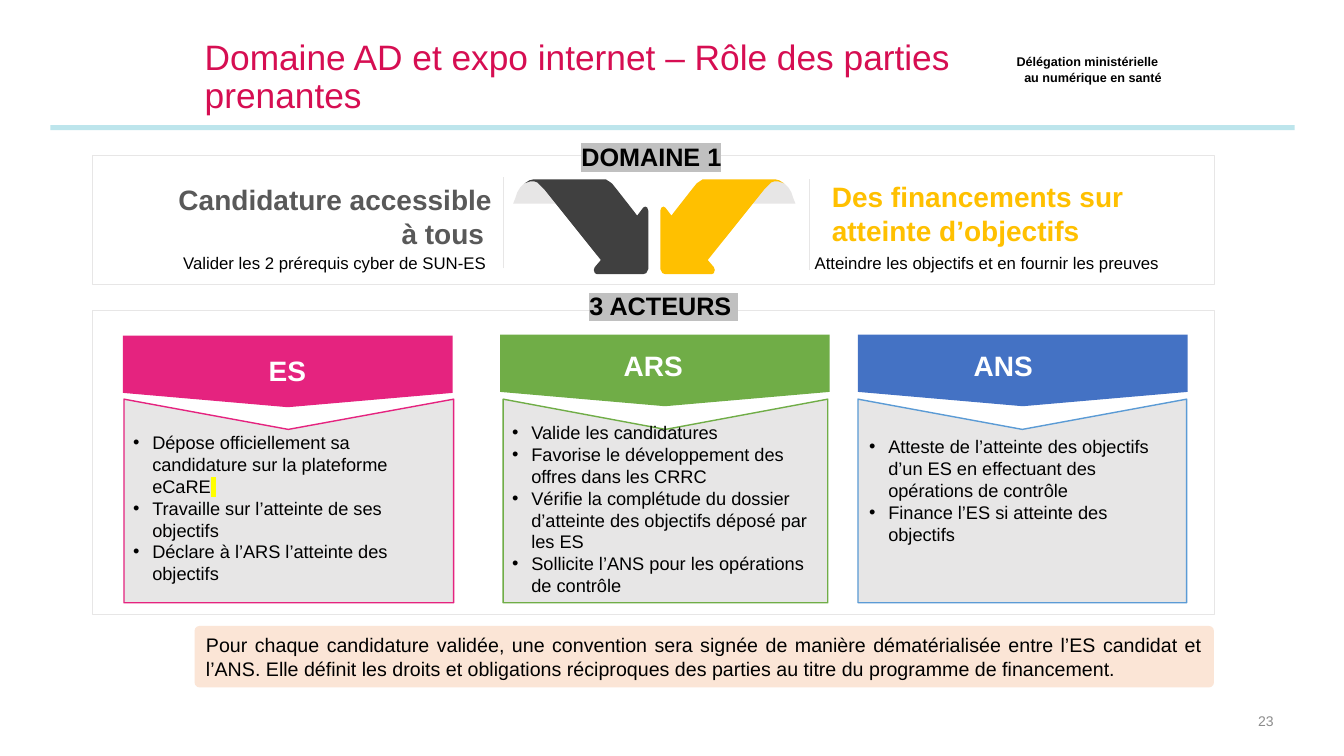
import dataclasses
import typing

import lxml.etree
import pptx
import pptx.dml.color
import pptx.enum.shapes
import pptx.enum.text
import pptx.oxml.ns
import pptx.util

RGB = pptx.dml.color.RGBColor
SHAPE = pptx.enum.shapes.MSO_SHAPE
ALIGN = pptx.enum.text.PP_ALIGN
ANCHOR = pptx.enum.text.MSO_ANCHOR
qn = pptx.oxml.ns.qn

CELL = 9144
COLS, ROWS = 1333, 750
Box = tuple[int, int, int, int]

BLACK, WHITE = RGB(0, 0, 0), RGB(255, 255, 255)
CRIMSON, PINK = RGB(0xD6, 0x0E, 0x52), RGB(0xE5, 0x23, 0x7F)
GREEN, BLUE, SKY = RGB(0x70, 0xAD, 0x47), RGB(0x44, 0x72, 0xC4), RGB(0x5B, 0x9B, 0xD5)
PALE, DARK, SLATE = RGB(0xE7, 0xE6, 0xE6), RGB(0x40, 0x40, 0x40), RGB(0x59, 0x59, 0x59)
AMBER, AQUA, PEACH = RGB(0xFF, 0xC0, 0), RGB(0xBD, 0xE5, 0xEC), RGB(0xFB, 0xE5, 0xD6)
GREY = RGB(0x8C, 0x8C, 0x8C)
SILVER, YELLOW = "C0C0C0", "FFFF00"

MIRROR = 1298
TAIL = [(509, 202), (562, 202), (562, 179), (526, 179), (522, 181), (519, 183),
        (516, 186), (513, 191), (511, 197)]
ARROW = [(643, 265), (643, 209), (642, 206), (640, 205), (638, 206), (632, 214),
         (629, 210), (611, 187), (607, 182), (604, 180), (601, 178), (599, 178),
         (529, 178), (525, 179), (522, 181), (520, 182), (523, 181), (526, 180),
         (530, 180), (533, 181), (536, 184), (540, 188), (596, 258), (590, 265),
         (589, 268), (590, 271), (592, 272), (638, 272), (641, 271), (642, 269),
         (643, 267)]


@dataclasses.dataclass
class Text:
    """A block of text: its lines, look and place."""

    box: Box
    lines: list[str]
    size: float
    color: RGB = BLACK
    bold: bool = False
    align: typing.Any = ALIGN.LEFT
    anchor: typing.Any = ANCHOR.TOP
    inset: typing.Optional[int] = 0
    wrap: bool = True
    highlight: str = ""
    bullet: bool = False
    spacing: float = 1.0


@dataclasses.dataclass
class Actor:
    """A party with its banner, card and list of tasks."""

    name: str
    color: RGB
    edge: RGB
    banner: Box
    label: Box
    card: tuple[int, int]
    tasks: Box
    lines: list[str]
    slot: int


ACTORS = [
    Actor("ES", PINK, PINK, (122, 333, 327, 71), (230, 348, 110, 39), (123, 450), (122, 423, 319, 163),
          ["Dépose officiellement sa candidature sur la plateforme eCaRE",
           "Travaille sur l’atteinte de ses objectifs",
           "Déclare à l’ARS l’atteinte des objectifs"], 1),
    Actor("ARS", GREEN, GREEN, (496, 332, 327, 71), (593, 343, 110, 39), (499, 821), (498, 413, 321, 185),
          ["Valide les candidatures",
           "Favorise le développement des offres dans les CRRC",
           "Vérifie la complétude du dossier d’atteinte des objectifs déposé par les ES",
           "Sollicite l’ANS pour les opérations de contrôle"], 2),
    Actor("ANS", BLUE, SKY, (851, 332, 327, 71), (940, 343, 110, 39), (851, 1177), (852, 427, 325, 119),
          ["Atteste de l’atteinte des objectifs d’un ES en effectuant des opérations de contrôle",
           "Finance l’ES si atteinte des objectifs"], 4),
]

TITLE = Text((193, 44, 864, 67), ["Domaine AD et expo internet – Rôle des parties prenantes"],
             25.2, CRIMSON, anchor=ANCHOR.MIDDLE, inset=None, spacing=0.9)
NOTICE = Text((193, 621, 1011, 61),
              ["Pour chaque candidature validée, une convention sera signée de manière dématérialisée "
               "entre l’ES candidat et l’ANS. Elle définit les droits et obligations réciproques des "
               "parties au titre du programme de financement."],
              14, align=ALIGN.JUSTIFY, anchor=ANCHOR.MIDDLE, inset=None)
TEXTS = [
    Text((987, 44, 165, 50), ["Délégation ministérielle ", "au numérique en santé"], 9, bold=True,
         align=ALIGN.RIGHT, anchor=ANCHOR.MIDDLE),
    Text((973, 695, 300, 40), ["23"], 10, GREY, align=ALIGN.RIGHT, anchor=ANCHOR.MIDDLE, inset=None),
    Text((825, 178, 76, 43), ["Des financements sur", "atteinte d’objectifs"], 20, AMBER, True, wrap=False),
    Text((412, 181, 76, 43), ["Candidature accessible", "à tous "], 20, SLATE, True, ALIGN.RIGHT, wrap=False),
    Text((808, 251, 375, 20), ["Atteindre les objectifs et en fournir les preuves"], 12, align=ALIGN.JUSTIFY),
    Text((118, 251, 369, 20), ["Valider les 2 prérequis cyber de SUN-ES "], 12, align=ALIGN.RIGHT),
    Text((525, 140, 242, 30), ["DOMAINE 1"], 18, bold=True, align=ALIGN.CENTER, highlight=SILVER),
    Text((455, 288, 407, 30), ["3 ACTEURS "], 18, bold=True, align=ALIGN.CENTER, highlight=SILVER),
]


def grid(box: Box) -> list[int]:
    """Turn grid columns and rows into lengths."""
    return [pptx.util.Emu(n * CELL) for n in box]


def add_run(p: typing.Any, text: str, t: Text, highlight: str) -> None:
    """Add a formatted run to a paragraph."""
    r = p.add_run()
    r.text = text
    for name, value in {"name": "Arial", "size": pptx.util.Pt(t.size), "bold": t.bold}.items():
        setattr(r.font, name, value)
    r.font.color.rgb = t.color
    if highlight:
        mark = lxml.etree.Element(qn("a:highlight"))
        lxml.etree.SubElement(mark, qn("a:srgbClr"), val=highlight)
        r.font._element.find(qn("a:latin")).addprevious(mark)


def fill_text(tf: typing.Any, t: Text) -> None:
    """Write a block of text into a frame."""
    frame = {"word_wrap": t.wrap, "auto_size": pptx.enum.text.MSO_AUTO_SIZE.NONE, "vertical_anchor": t.anchor}
    sides = ("left", "top", "right", "bottom")
    insets = (10, 5, 10, 5) if t.inset is None else (t.inset,) * 4
    frame |= {f"margin_{side}": length for side, length in zip(sides, grid(insets))}
    for name, value in frame.items():
        setattr(tf, name, value)
    zero = pptx.util.Pt(0)
    for i, line in enumerate(t.lines):
        p = tf.add_paragraph() if i else tf.paragraphs[0]
        pPr = p._p.get_or_add_pPr()
        if t.bullet:
            pPr.set("marL", str(19 * CELL))
            pPr.set("indent", str(-19 * CELL))
            lxml.etree.SubElement(pPr, qn("a:buChar"), char="•")
        for name, value in {"alignment": t.align, "line_spacing": t.spacing,
                            "space_before": zero, "space_after": zero}.items():
            setattr(p, name, value)
        add_run(p, line, t, t.highlight)


def place(sp: typing.Any, t: Text) -> None:
    """Move a placeholder to the front, at its place, and fill it."""
    sp.left, sp.top, sp.width, sp.height = grid(t.box)
    sp._element.getparent().append(sp._element)
    fill_text(sp.text_frame, t)


def add_text(s: typing.Any, t: Text) -> None:
    """Add a text box."""
    fill_text(s.shapes.add_textbox(*grid(t.box)).text_frame, t)


def paint(sp: typing.Any, fill: typing.Optional[RGB], line: typing.Optional[RGB] = None, width: float = 1) -> None:
    """Set the fill and outline of a shape."""
    sp.shadow.inherit = False
    if fill is None:
        sp.fill.background()
    else:
        sp.fill.solid()
        sp.fill.fore_color.rgb = fill
    if line is None:
        sp.line.fill.background()
    else:
        sp.line.color.rgb = line
        sp.line.width = pptx.util.Pt(width)


def add_outline(s: typing.Any, points: list[tuple[int, int]]) -> typing.Any:
    """Add a closed outline given in grid points."""
    builder = s.shapes.build_freeform(*points[0], scale=CELL)
    builder.add_line_segments(points[1:], close=True)
    return builder.convert_to_shape()


def add_actor(s: typing.Any, a: Actor) -> None:
    """Draw the card, banner and tasks of an actor."""
    left, right = a.card
    notch = ((left + right) // 2, 426)
    card = add_outline(s, [(left, 396), (left, 598), (right, 598), (right, 396), notch])
    paint(card, PALE, a.edge)
    paint(s.shapes.add_shape(SHAPE.FLOWCHART_OFFPAGE_CONNECTOR, *grid(a.banner)), a.color)
    add_text(s, Text(a.label, [a.name], 20, WHITE, True, ALIGN.CENTER, ANCHOR.MIDDLE, 10))
    place(s.placeholders[a.slot], Text(a.tasks, a.lines, 13, inset=None, bullet=True))


def add_divider(s: typing.Any, x: int, top: int, bottom: int) -> None:
    """Draw a thin vertical line."""
    c = s.shapes.add_connector(pptx.enum.shapes.MSO_CONNECTOR.STRAIGHT, *grid((x, bottom, x, top)))
    c.line.color.rgb = PALE
    c.line.width = pptx.util.Pt(0.5)
    lxml.etree.SubElement(c._element.spPr, qn("a:effectLst"))


def main() -> None:
    """Build the slide and save it."""
    prs = pptx.Presentation()
    prs.slide_width, prs.slide_height = grid((COLS, ROWS))
    s = prs.slides.add_slide(prs.slide_layouts[4])
    spare = s.placeholders[3]._element
    spare.getparent().remove(spare)
    paint(s.shapes.add_shape(SHAPE.RECTANGLE, *grid((50, 124, 1234, 5))), AQUA)
    place(s.shapes.title, TITLE)
    for top, height in ((154, 128), (308, 301)):
        paint(s.shapes.add_shape(SHAPE.RECTANGLE, *grid((91, top, 1113, height))), None, PALE, 0.25)
    for a in ACTORS:
        add_actor(s, a)
    es = ACTORS[0]
    first = s.placeholders[es.slot].text_frame.paragraphs[0]
    add_run(first, " ", Text(es.tasks, [], 13), YELLOW)
    notice = s.shapes.add_shape(SHAPE.ROUNDED_RECTANGLE, *grid(NOTICE.box))
    notice.adjustments[0] = 0.08
    paint(notice, PEACH)
    fill_text(notice.text_frame, NOTICE)
    for points, left_color, right_color in ((TAIL, PALE, PALE), (ARROW, DARK, AMBER)):
        paint(add_outline(s, points), left_color)
        paint(add_outline(s, [(MIRROR - x, y) for x, y in points]), right_color)
    add_divider(s, 803, 178, 268)
    add_divider(s, 499, 176, 266)
    for t in TEXTS:
        add_text(s, t)
    prs.save("out.pptx")


if __name__ == "__main__":
    main()
